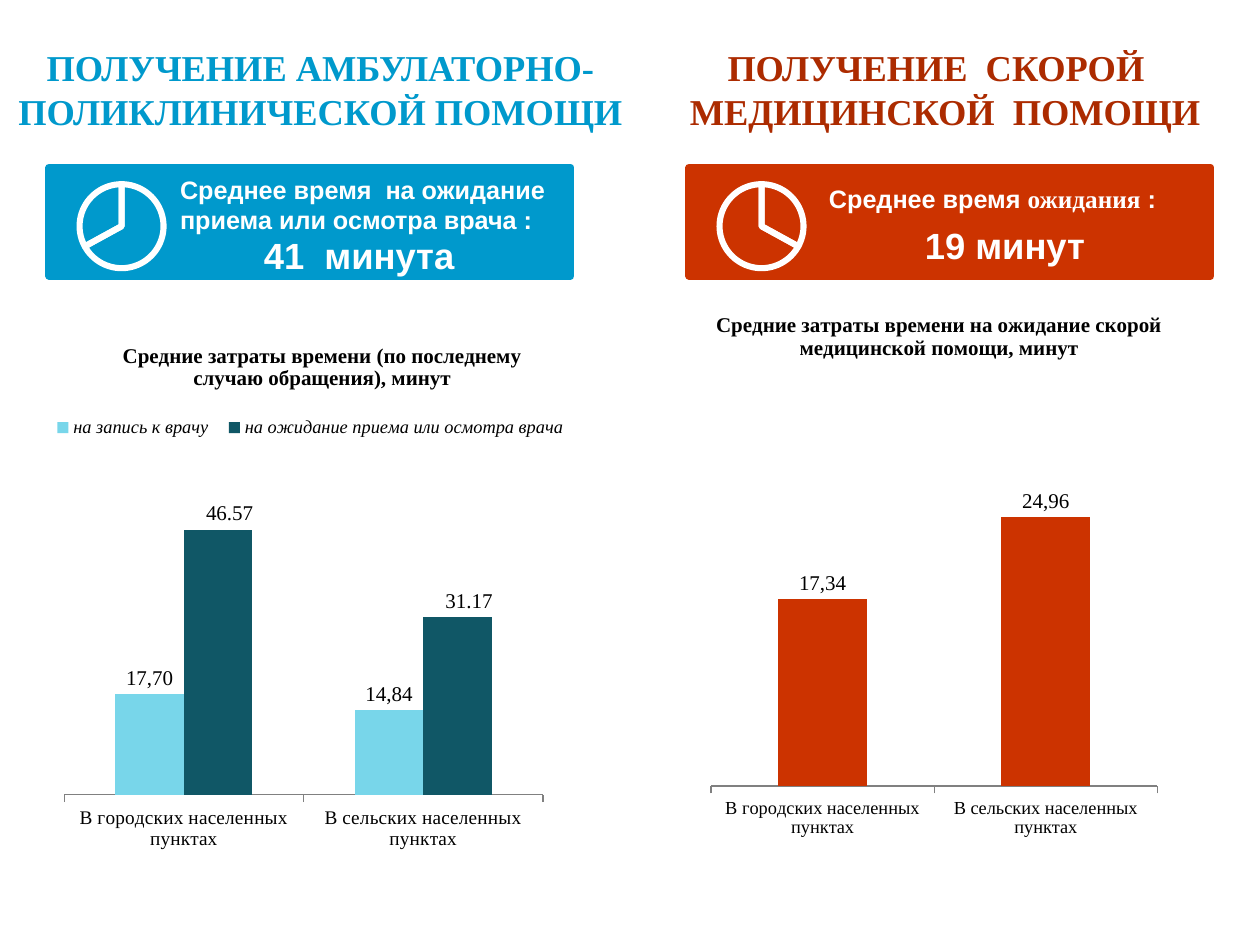
from lxml import etree
from pptx import Presentation
from pptx.chart.data import CategoryChartData
from pptx.dml.color import RGBColor
from pptx.enum import chart as ch, shapes, text
from pptx.oxml.ns import qn
from pptx.util import Pt

BLUE = RGBColor(0x00, 0x99, 0xCC)
RED = RGBColor(0xCC, 0x33, 0x00)
DARK_RED = RGBColor(0xAC, 0x2B, 0x00)
AQUA = RGBColor(0x78, 0xD6, 0xEA)
TEAL = RGBColor(0x10, 0x57, 0x66)
GREY = RGBColor(0x80, 0x80, 0x80)
WHITE = RGBColor(0xFF, 0xFF, 0xFF)
BLACK = RGBColor(0, 0, 0)
SERIF, SANS = "Times New Roman", "Arial"

# Content: boxes are (left, top, width, height) in points
CATS = ["В городских населенных пунктах", "В сельских населенных пунктах"]
PANELS = [
    dict(
        left=28.1, color=BLUE, title_color=BLUE, clock=(67, 33),
        title=["ПОЛУЧЕНИЕ АМБУЛАТОРНО-ПОЛИКЛИНИЧЕСКОЙ ПОМОЩИ"],
        title_box=(0, 22.3, 366, 55.4),
        caption=[("Среднее время  на ожидание приема или осмотра врача :", SANS)],
        caption_box=(95.8, 95.8, 225.4, 41),
        value="41  минута", value_box=(90, 129.6, 230.4, 31.7),
        chart=dict(
            box=(11.5, 180, 332, 339), top=60, step=20, cat_size=11,
            title="Средние затраты времени (по последнему\nслучаю обращения), минут",
            title_at=(0.17, 0.04), plot=(0.076, 0.233, 0.824, 0.576),
            legend=(0.04, 0.16, 0.92, 0.06),
            series=[("на запись к врачу", (17.7, 14.84), AQUA, ("17,70", "14,84")),
                    ("на ожидание приема или осмотра врача", (46.57, 31.17), TEAL, None)]),
    ),
    dict(
        left=393.8, color=RED, title_color=DARK_RED, clock=(33, 67),
        title=["ПОЛУЧЕНИЕ  СКОРОЙ  ", "МЕДИЦИНСКОЙ  ПОМОЩИ"],
        title_box=(360, 22.3, 360, 55.4),
        caption=[("Среднее время ", SANS), ("ожидания", SERIF), (" :", SANS)],
        caption_box=(466.6, 101.5, 219.6, 24.5),
        value="19 минут", value_box=(461.5, 123.8, 225.4, 31.7),
        chart=dict(
            box=(365.8, 157, 343.4, 383), top=30, step=10, cat_size=10.5,
            title="Средние затраты времени на ожидание скорой медицинской помощи, минут",
            title_at=(0.12, 0.05), plot=(0.118, 0.281, 0.743, 0.482),
            legend=None,
            series=[("Series 1", (17.34, 24.96), RED, ("17,34", "24,96"))]),
    ),
]

prs = Presentation()
prs.slide_width, prs.slide_height = Pt(720), Pt(540)
s = prs.slides.add_slide(prs.slide_layouts[6])


def pts(box):
    return [Pt(v) for v in box]


def set_font(font, size, color=BLACK, name=SERIF, bold=False, italic=False):
    font.size, font.name, font.bold, font.italic = Pt(size), name, bold, italic
    font.color.rgb = color


def add_text(box, paragraphs, align=text.PP_ALIGN.LEFT, **fmt):
    """Each paragraph is a list of (text, font name) runs."""
    tf = s.shapes.add_textbox(*pts(box)).text_frame
    tf.word_wrap = True
    for i, runs in enumerate(paragraphs):
        p = tf.paragraphs[0] if i == 0 else tf.add_paragraph()
        p.alignment = align
        for words, name in runs:
            r = p.add_run()
            r.text = words
            set_font(r.font, name=name, bold=True, **fmt)


def set_layout(parent, after, at, inner=False):
    """Give a chart part a manual layout, as fractions of the chart."""
    for old in parent.findall(qn("c:layout")):
        parent.remove(old)
    layout = etree.Element(qn("c:layout"))
    manual = etree.SubElement(layout, qn("c:manualLayout"))
    items = [("layoutTarget", "inner")] if inner else []
    if after != "idx":
        items += [("xMode", "edge"), ("yMode", "edge")]
    items += zip("xywh", at)
    for tag, val in items:
        etree.SubElement(manual, qn("c:" + tag)).set("val", str(val))
    prev = parent.find(qn("c:" + after)) if after else None
    parent.insert(0 if prev is None else parent.index(prev) + 1, layout)


def add_chart(kind, box, cats, series, plot):
    data = CategoryChartData()
    data.categories = cats
    for name, vals in series:
        data.add_series(name, vals)
    c = s.shapes.add_chart(kind, *pts(box), data).chart
    set_font(c.font, 18, name="Noto Sans Mono")
    c.has_legend = c.has_title = False
    c.plots[0].vary_by_categories = False
    set_layout(c.element.find(".//" + qn("c:plotArea"))
               if hasattr(c, "element") else c._chartSpace.find(".//" + qn("c:plotArea")),
               None, plot, inner=True)
    return c


def add_clock(left, vals):
    c = add_chart(ch.XL_CHART_TYPE.PIE, (left, 95.8, 82.8, 67.7), ["1", "2"],
                  [("Series 1", vals)], (0.21, 0.14, 0.58, 0.71))
    for i in range(len(vals)):
        f = c.plots[0].series[0].points[i].format
        f.fill.background()
        f.line.color.rgb, f.line.width = WHITE, Pt(3.5)


def add_columns(box, top, step, cat_size, title, title_at, plot, legend, series):
    c = add_chart(ch.XL_CHART_TYPE.COLUMN_CLUSTERED, box, CATS,
                  [row[:2] for row in series], plot)
    # Title and legend
    c.has_title = True
    tf = c.chart_title.text_frame
    tf.text = title
    for p in tf.paragraphs:
        set_font(p.runs[0].font, 12, bold=True)
    set_layout(c.chart_title._element, "tx", title_at)
    if legend:
        c.has_legend = True
        c.legend.position = ch.XL_LEGEND_POSITION.BOTTOM
        c.legend.include_in_layout = False
        set_font(c.legend.font, 10.5, italic=True)
        set_layout(c.legend._element, "legendPos", legend)
    # Axes
    v, x = c.value_axis, c.category_axis
    v.minimum_scale, v.maximum_scale, v.major_unit = 0, top, step
    v.has_major_gridlines, v.visible = False, False
    x.major_tick_mark = ch.XL_TICK_MARK.OUTSIDE
    x.format.line.color.rgb = GREY
    set_font(x.tick_labels.font, cat_size)
    # Columns and their labels
    c.plots[0].gap_width, c.plots[0].overlap = 150, 0
    for ser, (_, vals, color, labels) in zip(c.plots[0].series, series):
        ser.format.fill.solid()
        ser.format.fill.fore_color.rgb = color
        dl = ser.data_labels
        dl.show_value, dl.position = True, ch.XL_LABEL_POSITION.OUTSIDE_END
        dl.number_format, dl.number_format_is_linked = "0.00", False
        set_font(dl.font, 12)
        for i in range(len(vals)):
            label = ser.points[i].data_label
            if labels:
                label.text_frame.text = labels[i]
                set_font(label.text_frame.paragraphs[0].runs[0].font, 12)
            else:
                set_font(label.font, 12)
            label.position = ch.XL_LABEL_POSITION.OUTSIDE_END
        if not labels:
            for el in ser._element.iter(qn("c:dLbl")):
                set_layout(el, "idx", (0.02, 0))


for panel in PANELS:
    # Heading
    add_text(panel["title_box"], [[(t, SERIF)] for t in panel["title"]],
             text.PP_ALIGN.CENTER, size=20.8, color=panel["title_color"])
    # Banner
    sp = s.shapes.add_shape(shapes.MSO_SHAPE.RECTANGLE,
                            *pts((panel["left"], 95.8, 298, 61.9)))
    sp.shadow.inherit = False
    sp.fill.solid()
    sp.fill.fore_color.rgb = sp.line.color.rgb = panel["color"]
    sp.line.width = Pt(4.33)
    add_text(panel["caption_box"], [panel["caption"]], size=14.4, color=WHITE)
    add_text(panel["value_box"], [[(panel["value"], SANS)]],
             text.PP_ALIGN.CENTER, size=20.8, color=WHITE)
    # Charts
    add_clock(panel["left"], panel["clock"])
    add_columns(**panel["chart"])

prs.save("out.pptx")
